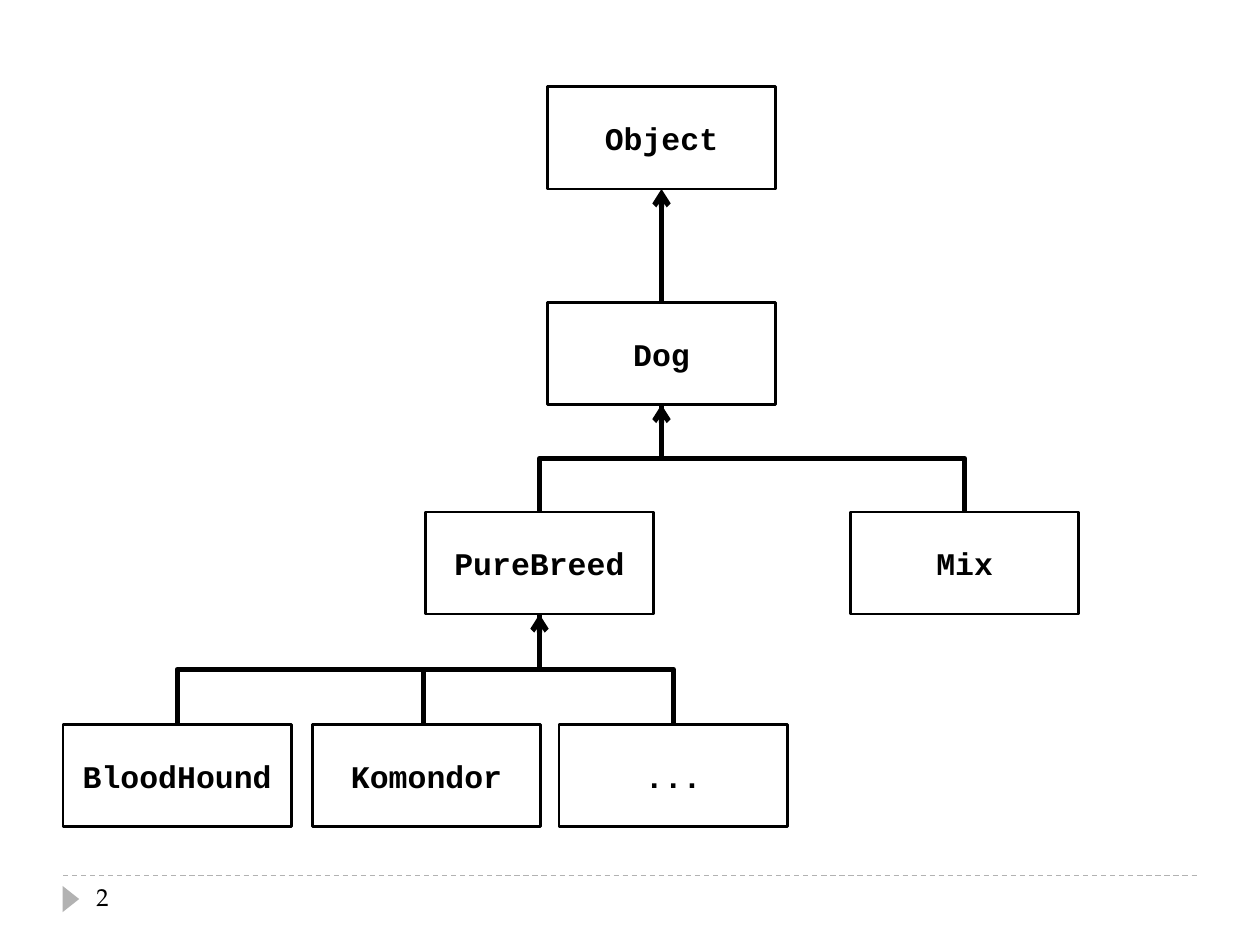
from lxml.etree import SubElement
from pptx import Presentation
from pptx.dml.color import RGBColor
from pptx.enum.dml import MSO_LINE_DASH_STYLE as Dash
from pptx.enum.shapes import MSO_CONNECTOR as Link, MSO_SHAPE as Shape
from pptx.enum.text import MSO_ANCHOR as Anchor, PP_ALIGN as Align
from pptx.oxml.ns import qn
from pptx.util import Pt

BLACK, GREY = "000000", "B2B2B2"
BOX_WIDTH, BOX_HEIGHT = 130.5, 58.5


def color(value):
    return RGBColor.from_string(value)


class ClassDiagram:
    """Draws a class hierarchy on one slide in a single style."""

    code_font, number_font = "Courier New", "TeX Gyre Pagella"

    def __init__(self, page):
        self.page = page

    def add_text(self, frame, text, font, size, bold=False):
        para = frame.paragraphs[0]
        span = para.add_run()
        span.text = text
        span.font.name, span.font.size, span.font.bold = font, Pt(size), bold
        span.font.color.rgb = color(BLACK)
        return para

    def class_box(self, name, left, top):
        box = self.page.shapes.add_shape(
            Shape.RECTANGLE, Pt(left), Pt(top), Pt(BOX_WIDTH), Pt(BOX_HEIGHT))
        box.shadow.inherit = False
        box.fill.background()
        box.line.color.rgb = color(BLACK)
        box.line.width = Pt(1.5)
        box.text_frame.vertical_anchor = Anchor.MIDDLE
        box.text_frame.word_wrap = False
        para = self.add_text(box.text_frame, name, self.code_font, 18, True)
        para.alignment = Align.CENTER
        return box

    def connector(self, kind, start, end, width=3, shade=BLACK, arrow=False):
        line = self.page.shapes.add_connector(
            kind, *(Pt(value) for value in (*start, *end)))
        line.line.color.rgb = color(shade)
        line.line.width = Pt(width)
        properties = line._element.spPr
        if arrow:
            SubElement(properties.find(qn("a:ln")), qn("a:headEnd"), type="arrow")
        SubElement(properties, qn("a:effectLst"))
        return line

    def inherit(self, parent, child):
        line = self.connector(Link.STRAIGHT, (0, 0), (0, 0), arrow=True)
        line.begin_connect(parent, 2)
        line.end_connect(child, 0)

    def branch(self, parent, child, arrow=False):
        start_x = parent.left.pt + BOX_WIDTH / 2
        end_x = child.left.pt + BOX_WIDTH / 2
        start_y, end_y = parent.top.pt + BOX_HEIGHT, child.top.pt
        middle_x, middle_y = (start_x + end_x) / 2, (start_y + end_y) / 2
        side = 1 if end_x > start_x else -1
        half_drop, half_span = side * (end_y - start_y) / 2, abs(end_x - start_x) / 2
        line = self.connector(
            Link.ELBOW,
            (middle_x + half_drop, middle_y - half_span),
            (middle_x - half_drop, middle_y + half_span),
            arrow=arrow)
        turn = 270 if side > 0 else 90
        line._element.spPr.find(qn("a:xfrm")).set("rot", str(turn * 60000))

    def footer(self, number):
        rule = self.connector(Link.STRAIGHT, (36, 500.4), (684, 500.4), 0.75, GREY)
        rule.line.dash_style = Dash.DASH
        marker = self.page.shapes.add_shape(
            Shape.ISOSCELES_TRIANGLE, Pt(33), Pt(509), Pt(15), Pt(9.5))
        marker.rotation = 90
        marker.shadow.inherit = False
        marker.fill.solid()
        marker.fill.fore_color.rgb = color(GREY)
        marker.line.fill.background()
        box = self.page.shapes.add_textbox(Pt(48), Pt(500.4), Pt(156), Pt(28.8))
        box.text_frame.word_wrap = True
        self.add_text(box.text_frame, number, self.number_font, 14)


def main():
    deck = Presentation()
    deck.slide_width, deck.slide_height = Pt(720), Pt(540)
    diagram = ClassDiagram(deck.slides.add_slide(deck.slide_layouts[6]))
    diagram.footer("2")

    root = diagram.class_box("Object", 312.75, 49.5)
    dog = diagram.class_box("Dog", 312.75, 172.75)
    pure_breed = diagram.class_box("PureBreed", 243, 292.5)
    mix = diagram.class_box("Mix", 486, 292.5)
    blood_hound, komondor, others = (
        diagram.class_box(name, left, 414)
        for name, left in (("BloodHound", 36), ("Komondor", 178.5), ("...", 319.5)))

    diagram.inherit(root, dog)
    diagram.branch(dog, mix, arrow=True)
    diagram.branch(dog, pure_breed)
    diagram.branch(pure_breed, blood_hound)
    diagram.branch(pure_breed, others, arrow=True)
    diagram.connector(Link.STRAIGHT, (242, 382.5), (242, komondor.top.pt))
    deck.save("out.pptx")


if __name__ == "__main__":
    main()
